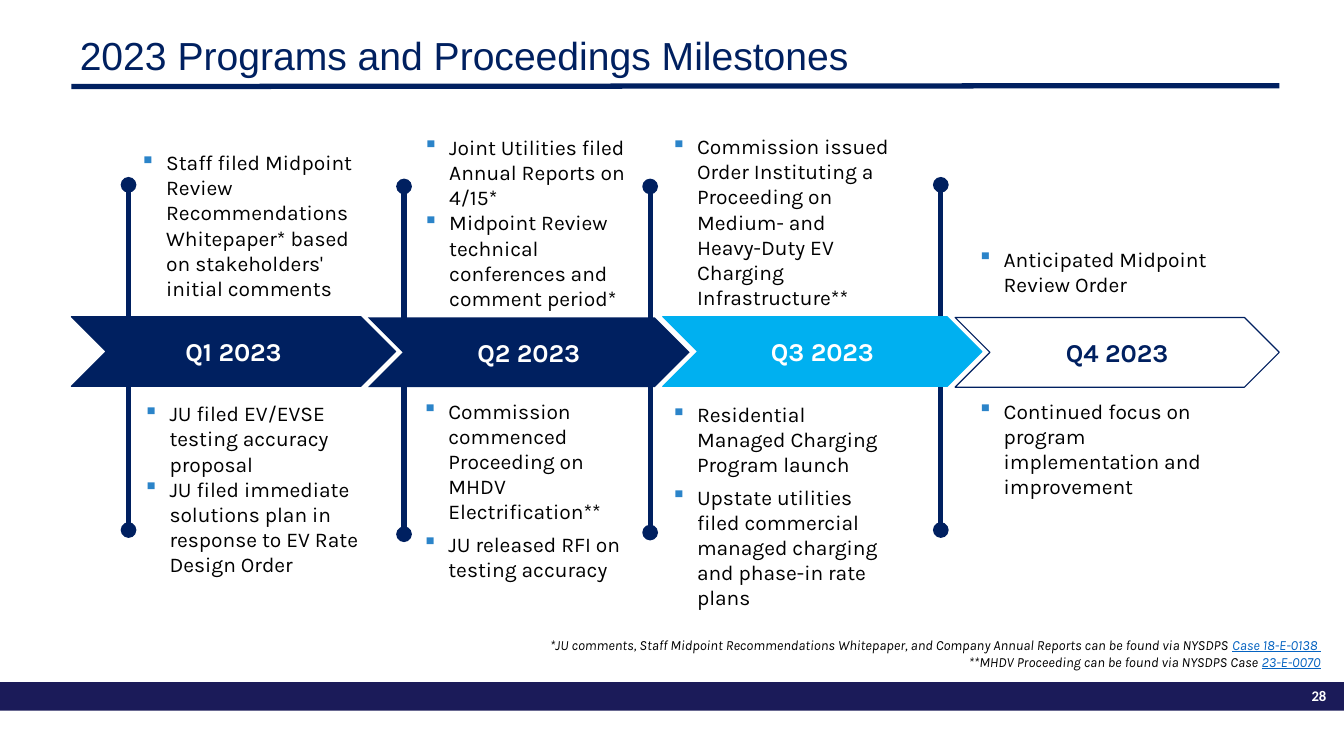
from lxml import etree
from pptx import Presentation
from pptx.dml.color import RGBColor
from pptx.enum import shapes, text
from pptx.oxml import ns
from pptx.util import Inches, Pt

COLORS = {"navy": "002060", "sky": "00B0F0", "white": "FFFFFF", "black": "000000",
          "bullet": "2B84C9", "link": "0563C1", "footer": "1B1B59"}
ALIGN = text.PP_ALIGN
ANCHOR = text.MSO_ANCHOR
SHAPE = shapes.MSO_SHAPE


def set_font(font, color, **values):
    for name, value in values.items():
        setattr(font, name, value)
    font.color.rgb = RGBColor.from_string(COLORS[color])


def add_line(start, finish, oval_end=None):
    line = page.shapes.add_connector(shapes.MSO_CONNECTOR.STRAIGHT,
                                     *map(Inches, start + finish))
    line.line.width = Pt(4.5)
    line.line.color.rgb = RGBColor.from_string(COLORS["navy"])
    etree.SubElement(line._element.spPr, ns.qn("a:effectLst"))
    if oval_end:
        etree.SubElement(line.line._get_or_add_ln(), ns.qn(f"a:{oval_end}"), type="oval")


deck = Presentation()
deck.slide_width, deck.slide_height = Inches(16), Inches(9)
page = deck.slides.add_slide(deck.slide_layouts[5])

title = page.shapes.title
title.left, title.top, title.width, title.height = map(Inches, (0.85, 0.4, 14.38, 0.57))
title.text_frame.text = "2023 Programs and Proceedings Milestones"
title.text_frame.vertical_anchor = ANCHOR.MIDDLE
heading = title.text_frame.paragraphs[0]
heading.alignment = ALIGN.LEFT
heading.line_spacing = 0.9
set_font(heading.font, "navy", name="Arial", size=Pt(33.5))
add_line((0.85, 1.03), (15.23, 1.02))

footer = page.shapes.add_shape(SHAPE.RECTANGLE, 0, Inches(8.12), Inches(16), Inches(0.34))
footer.shadow.inherit = False
footer.fill.solid()
footer.fill.fore_color.rgb = RGBColor.from_string(COLORS["footer"])
footer.line.fill.background()

number = page.shapes.add_textbox(*map(Inches, (15.23, 8.13, 0.66, 0.31)))
number.text_frame.text = "28"
number_para = number.text_frame.paragraphs[0]
number_para.alignment = ALIGN.RIGHT
set_font(number_para.font, "white", name="Calibri", size=Pt(12.6), bold=True)

stems = [
    (1.53, 2.2, 3.9, 4.57, 6.31),
    (4.81, 2.22, 3.79, 4.6, 6.36),
    (7.74, 2.22, 3.79, 4.6, 6.34),
    (11.2, 2.2, 3.96, 4.57, 6.31),
]
for x, upper_top, upper_end, lower_top, lower_end in stems:
    add_line((x, upper_top), (x, upper_end), "headEnd")
    add_line((x, lower_top), (x, lower_end), "tailEnd")

quarters = [
    (0.85, 3.77, 3.86, "navy", "navy", "white"),
    (4.38, 3.78, 3.83, "navy", None, "white"),
    (7.89, 3.77, 3.8, "sky", "sky", "white"),
    (11.37, 3.78, 3.86, "white", "navy", "navy"),
]
for index, (left, top, width, fill, outline, ink) in enumerate(quarters, 1):
    chevron = page.shapes.add_shape(SHAPE.CHEVRON, *map(Inches, (left, top, width, 0.83)))
    chevron.shadow.inherit = False
    chevron.fill.solid()
    chevron.fill.fore_color.rgb = RGBColor.from_string(COLORS[fill])
    if outline:
        chevron.line.color.rgb = RGBColor.from_string(COLORS[outline])
        chevron.line.width = Pt(1)
    else:
        chevron.line.fill.background()
    chevron.text_frame.text = f"Q{index} 2023"
    chevron.text_frame.vertical_anchor = ANCHOR.MIDDLE
    label = chevron.text_frame.paragraphs[0]
    label.alignment = ALIGN.CENTER
    set_font(label.font, ink, name="Karla", size=Pt(22), bold=True)

milestones = [
    ((1.57, 1.73, 2.83, 1.92), 0,
     ["Staff filed Midpoint Review Recommendations Whitepaper* based on stakeholders' "
      "initial comments"]),
    ((1.61, 4.72, 2.92, 2.22), 0,
     ["JU filed EV/EVSE testing accuracy proposal",
      "JU filed immediate solutions plan in response to EV Rate Design Order"]),
    ((4.94, 1.55, 2.77, 2.22), 0,
     ["Joint Utilities filed Annual Reports on 4/15*",
      "Midpoint Review technical conferences and comment period*"]),
    ((4.93, 4.69, 2.83, 2.31), 6,
     ["Commission commenced Proceeding on MHDV Electrification**",
      "JU released RFI on testing accuracy"]),
    ((7.89, 1.54, 2.83, 2.22), 0,
     ["Commission issued Order Instituting a Proceeding on Medium- and Heavy-Duty EV "
      "Charging Infrastructure**"]),
    ((7.89, 4.73, 2.83, 2.61), 6,
     ["Residential Managed Charging Program launch",
      "Upstate utilities filed commercial managed charging and phase-in rate plans"]),
    ((11.54, 2.88, 3.37, 0.71), 0, ["Anticipated Midpoint Review Order"]),
    ((11.54, 4.69, 3.37, 1.7), 0,
     ["Continued focus on program implementation and improvement"]),
]
for place, gap, items in milestones:
    box = page.shapes.add_textbox(*map(Inches, place))
    box.text_frame.word_wrap = True
    box.text_frame.text = "\n".join(items)
    for position, para in enumerate(box.text_frame.paragraphs):
        props = para._p.get_or_add_pPr()
        props.set("marL", str(Inches(0.31)))
        props.set("indent", str(-Inches(0.31)))
        bullet_color = etree.SubElement(props, ns.qn("a:buClr"))
        etree.SubElement(bullet_color, ns.qn("a:srgbClr"), val=COLORS["bullet"])
        etree.SubElement(props, ns.qn("a:buChar"), char="▪")
        if position and gap:
            para.space_before = Pt(gap)
        set_font(para.font, "black", name="Karla", size=Pt(18))

footnotes = [
    ("*JU comments, Staff Midpoint Recommendations Whitepaper, and Company Annual "
     "Reports can be found via NYSDPS ", "Case 18-E-0138 "),
    ("**MHDV Proceeding can be found via NYSDPS Case ", "23-E-0070"),
]
notes = page.shapes.add_textbox(*map(Inches, (5.02, 7.53, 10.8, 0.5)))
notes.text_frame.word_wrap = True
notes.text_frame.text = "\n".join(lead for lead, case in footnotes)
for para, (lead, case) in zip(notes.text_frame.paragraphs, footnotes):
    para.alignment = ALIGN.RIGHT
    para.add_run().text = case
    for span, color in zip(para.runs, ("black", "link")):
        set_font(span.font, color, name="Karla", size=Pt(12), italic=True,
                 underline=color == "link")

deck.save("out.pptx")
